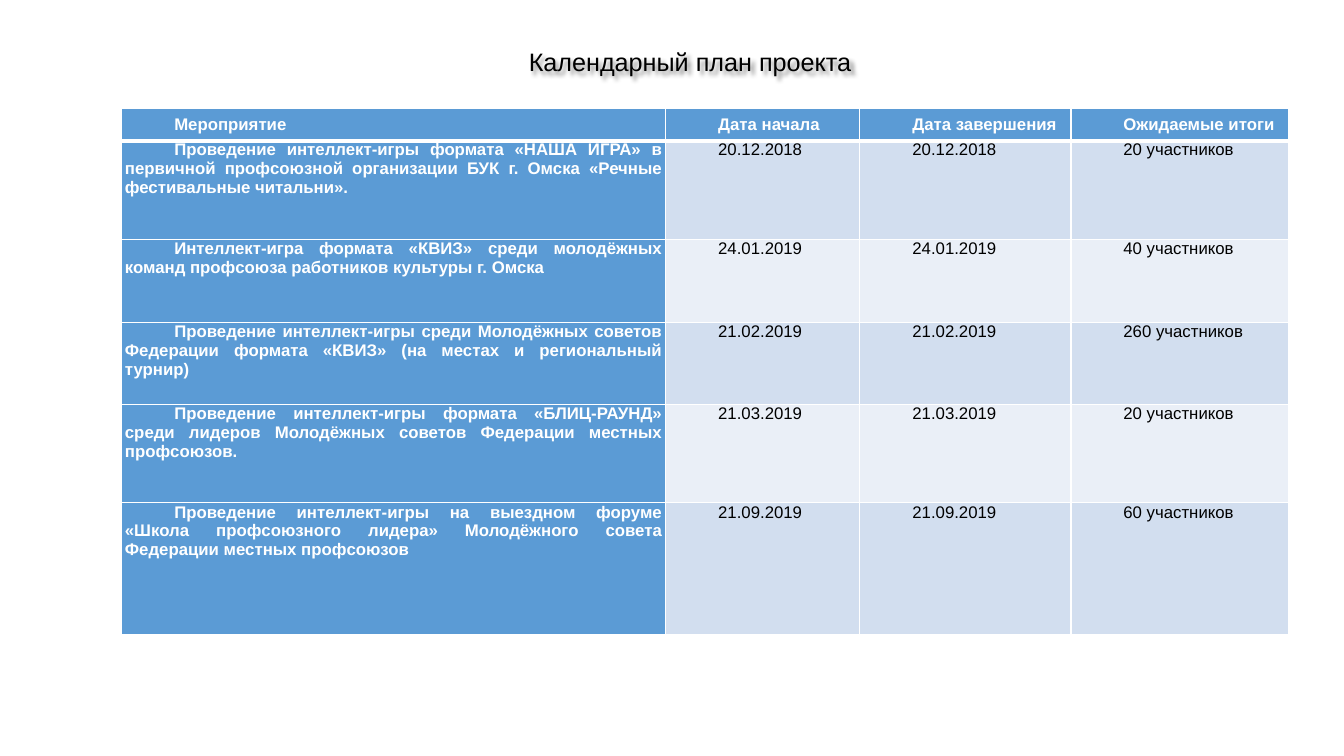
from typing import NamedTuple

from lxml.etree import SubElement, fromstring
from pptx import Presentation
from pptx.dml.color import RGBColor
from pptx.enum.text import MSO_ANCHOR as Anchor, MSO_AUTO_SIZE as AutoSize, PP_ALIGN as Align
from pptx.oxml.ns import nsdecls, qn
from pptx.util import Pt

EMU_PER_PX = 9525
BLACK = RGBColor(0x00, 0x00, 0x00)
WHITE = RGBColor(0xFF, 0xFF, 0xFF)
BLUE = RGBColor(0x5B, 0x9B, 0xD5)
BANDS = (RGBColor(0xD2, 0xDE, 0xEF), RGBColor(0xEA, 0xEF, 0xF7))
COLUMN_WIDTHS = (518, 185, 201, 207)
HEADER_HEIGHT = 31
FIRST_LINE_INDENT = 47


class Event(NamedTuple):
    """One row of the calendar plan."""
    height: int
    name: str
    date: str
    result: str


HEADERS = ("Мероприятие", "Дата начала", "Дата завершения", "Ожидаемые итоги")
EVENTS = (
    Event(94, "Проведение интеллект-игры формата «НАША ИГРА» в первичной профсоюзной "
              "организации БУК г. Омска «Речные фестивальные читальни».",
          "20.12.2018", "20 участников"),
    Event(79, "Интеллект-игра формата «КВИЗ» среди молодёжных команд профсоюза "
              "работников культуры г. Омска",
          "24.01.2019", "40 участников"),
    Event(78, "Проведение интеллект-игры среди Молодёжных советов Федерации формата "
              "«КВИЗ» (на местах и региональный турнир)",
          "21.02.2019", "260 участников"),
    Event(94, "Проведение интеллект-игры формата «БЛИЦ-РАУНД» среди лидеров Молодёжных "
              "советов Федерации местных профсоюзов.",
          "21.03.2019", "20 участников"),
    Event(125, "Проведение интеллект-игры на выездном форуме «Школа профсоюзного лидера» "
               "Молодёжного совета Федерации местных профсоюзов",
          "21.09.2019", "60 участников"),
)


def px(length: int) -> int:
    """Turn pixels into EMU."""
    return length * EMU_PER_PX


def write_text(frame, text: str, *, size: int = 12, color: RGBColor = BLACK,
               bold: bool = False, align: Align = Align.JUSTIFY, indent: int = 0) -> None:
    """Write one formatted paragraph."""
    paragraph = frame.paragraphs[0]
    paragraph.alignment = align
    properties = paragraph._p.get_or_add_pPr()
    properties.set("marL", "0")
    properties.set("indent", str(px(indent)))
    run = paragraph.add_run()
    run.text = text
    run.font.size = Pt(size)
    run.font.bold = bold
    run.font.color.rgb = color
    run.font.name = "Arial"


def add_shadow(shape) -> None:
    """Give the text of an unfilled shape a soft shadow."""
    shape.fill.background()
    shape.line.fill.background()
    effects = fromstring(
        f'<a:effectLst {nsdecls("a")}>'
        '<a:outerShdw blurRad="38100" dist="38100" dir="2700000" algn="tl">'
        '<a:srgbClr val="000000"><a:alpha val="43000"/></a:srgbClr>'
        '</a:outerShdw></a:effectLst>')
    shape.element.spPr.append(effects)


def add_border(cell, side: str, width: int) -> None:
    """Draw one white edge of a cell."""
    line = SubElement(cell._tc.get_or_add_tcPr(), qn(f"a:ln{side}"), w=str(Pt(width)))
    fill = SubElement(line, qn("a:solidFill"))
    SubElement(fill, qn("a:srgbClr"), val=str(WHITE))


def fill_cell(cell, text: str, row: int, column: int) -> None:
    """Format one cell by its place in the table."""
    header = row == 0
    strong = header or column == 0
    for side in "LRTB":
        heavy = (header and side == "B") or (row == 1 and side == "T")
        add_border(cell, side, 3 if heavy else 1)
    cell.fill.solid()
    cell.fill.fore_color.rgb = BLUE if strong else BANDS[(row - 1) % 2]
    cell.margin_left = cell.margin_right = px(3)
    cell.margin_top = cell.margin_bottom = 0
    cell.vertical_anchor = Anchor.MIDDLE if header else Anchor.TOP
    write_text(cell.text_frame, text, color=WHITE if strong else BLACK,
               bold=strong, indent=FIRST_LINE_INDENT)


def add_title(slide) -> None:
    """Place and write the slide title."""
    title = slide.shapes.title
    title.left, title.top, title.width, title.height = map(px, (494, 40, 330, 38))
    frame = title.text_frame
    frame.word_wrap = False
    frame.auto_size = AutoSize.NONE
    frame.vertical_anchor = Anchor.MIDDLE
    write_text(frame, "Календарный план проекта", size=18, align=Align.LEFT)
    add_shadow(title)


def add_plan(slide) -> None:
    """Build the table of events."""
    rows = [HEADERS] + [(event.name, event.date, event.date, event.result) for event in EVENTS]
    heights = [HEADER_HEIGHT] + [event.height for event in EVENTS]
    table = slide.shapes.add_table(len(rows), len(HEADERS), px(116), px(103),
                                   px(sum(COLUMN_WIDTHS)), px(sum(heights))).table
    for column, width in zip(table.columns, COLUMN_WIDTHS):
        column.width = px(width)
    for row_index, (height, texts) in enumerate(zip(heights, rows)):
        table.rows[row_index].height = px(height)
        for column_index, text in enumerate(texts):
            fill_cell(table.cell(row_index, column_index), text, row_index, column_index)


def main() -> None:
    """Build and save the presentation."""
    presentation = Presentation()
    presentation.slide_width, presentation.slide_height = px(1280), px(720)
    slide = presentation.slides.add_slide(presentation.slide_layouts[5])
    add_title(slide)
    add_plan(slide)
    presentation.save("out.pptx")


if __name__ == "__main__":
    main()
